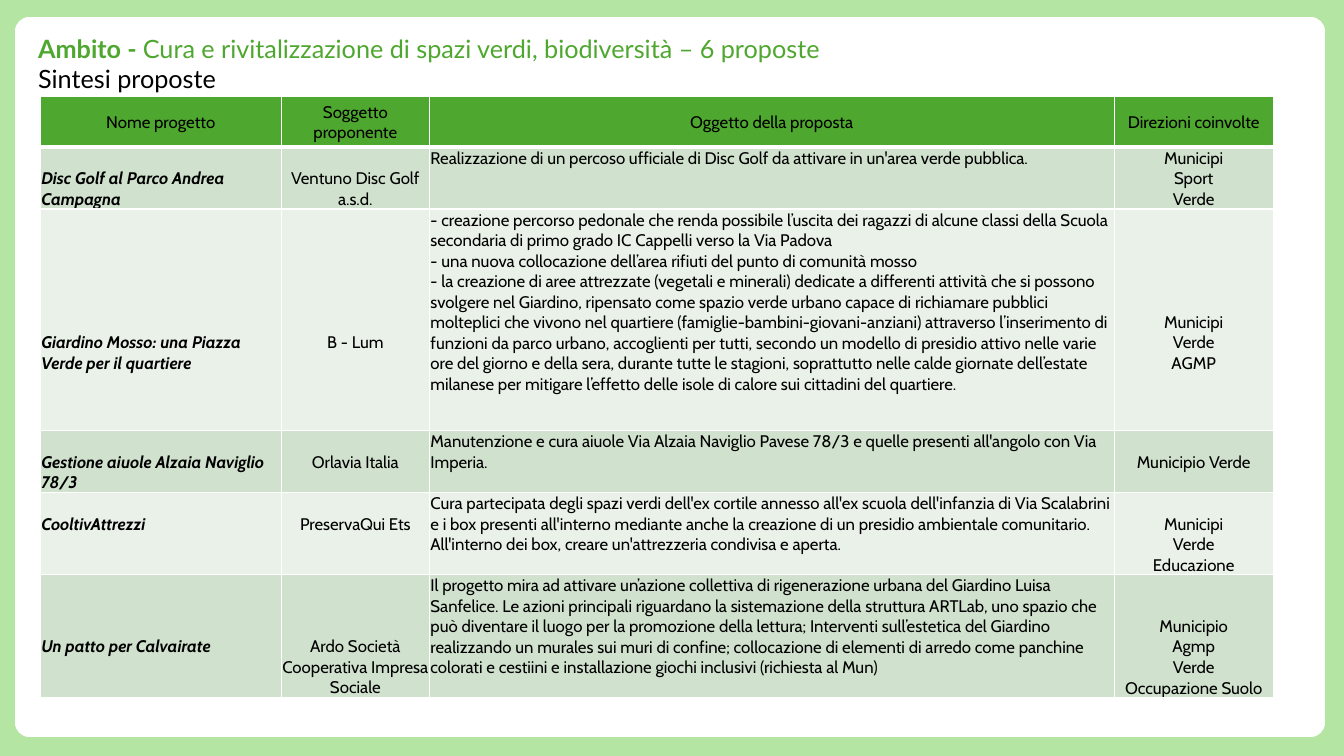
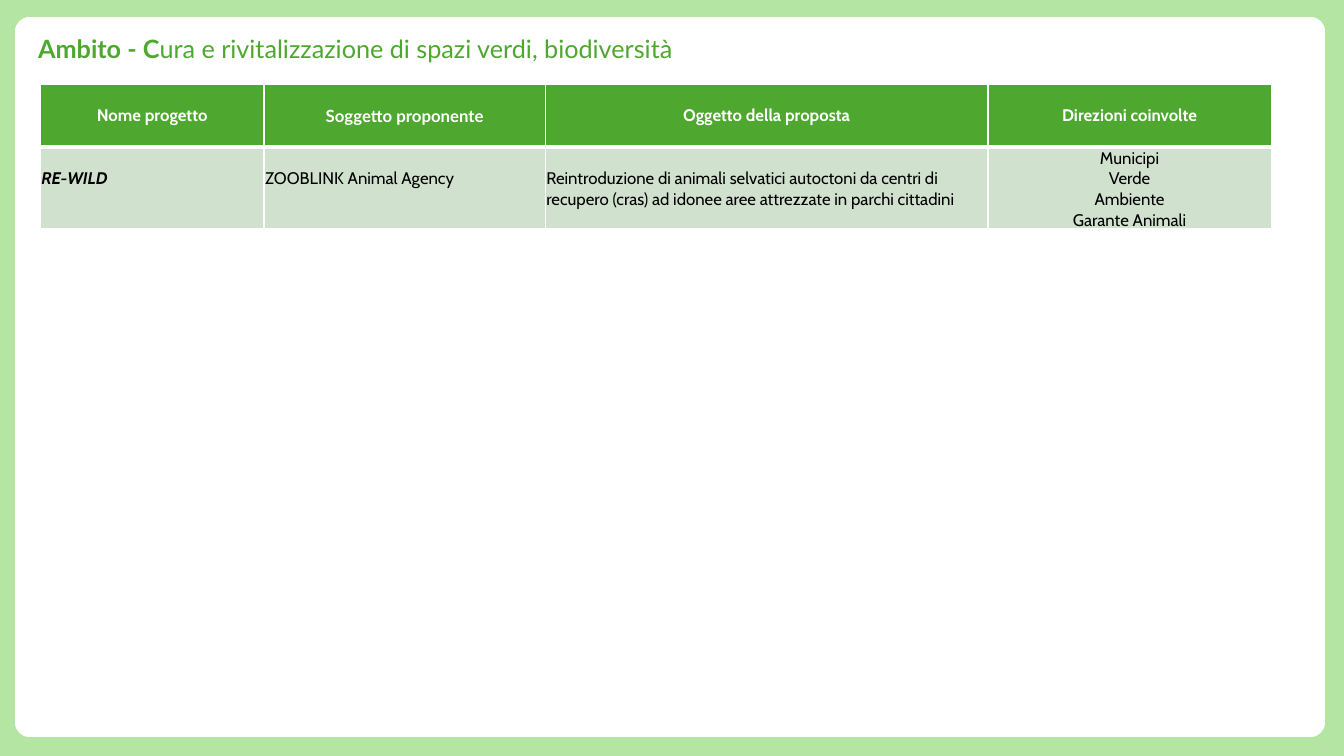
"""Builds two slides of citizen proposals for green spaces, each a title over a table."""
import pptx
import pptx.dml.color
import pptx.enum.shapes
import pptx.enum.text
import pptx.oxml
import pptx.oxml.ns
import pptx.util

RGBColor = pptx.dml.color.RGBColor
Pt = pptx.util.Pt
ALIGN = pptx.enum.text.PP_ALIGN
ANCHOR = pptx.enum.text.MSO_ANCHOR

WIDTH, HEIGHT = pptx.util.Inches(13.33), pptx.util.Inches(7.5)
FRAME_GREEN = RGBColor(0xB4, 0xE5, 0xA2)
GREEN = RGBColor(0x4E, 0xA7, 0x2E)
BANDS = (RGBColor(0xD0, 0xE1, 0xCD), RGBColor(0xE9, 0xF1, 0xE8))
WHITE = RGBColor(0xFF, 0xFF, 0xFF)
BLACK = RGBColor(0, 0, 0)
TITLE_FONT, TABLE_FONT = "Lato", "Cabin"
LINE_HEIGHT = Pt(14.6)
CELL_INSET = Pt(0.7)
TABLE_LEFT = 3
HEADINGS = ("Nome progetto", "Soggetto proponente", "Oggetto della proposta", "Direzioni coinvolte")

GARDEN_AIMS = (
    "- creazione percorso pedonale che renda possibile l’uscita dei ragazzi di alcune classi "
    "della Scuola secondaria di primo grado IC Cappelli verso la Via Padova",
    "- una nuova collocazione dell’area rifiuti del punto di comunità mosso",
    "- la creazione di aree attrezzate (vegetali e minerali) dedicate a differenti attività che "
    "si possono svolgere nel Giardino, ripensato come spazio verde urbano capace di richiamare "
    "pubblici molteplici che vivono nel quartiere (famiglie-bambini-giovani-anziani) attraverso "
    "l’inserimento di funzioni da parco urbano, accoglienti per tutti, secondo un modello di "
    "presidio attivo nelle varie ore del giorno e della sera, durante tutte le stagioni, "
    "soprattutto nelle calde giornate dell’estate milanese per mitigare l’effetto delle isole "
    "di calore sui cittadini del quartiere.",
)
PROPOSALS = [
    (("Disc Golf al Parco Andrea Campagna",
      "Ventuno Disc Golf a.s.d.",
      "Realizzazione di un percoso ufficiale di Disc Golf da attivare in un'area verde pubblica.",
      "Municipi\nSport\nVerde"), (1, 1, 0, 0)),
    (("Giardino Mosso: una Piazza Verde per il quartiere",
      "B - Lum",
      "\n".join(GARDEN_AIMS),
      "Municipi\nVerde\nAGMP"), (6, 6, 0, 5)),
    (("Gestione aiuole Alzaia Naviglio 78/3",
      "Orlavia Italia",
      "Manutenzione e cura aiuole Via Alzaia Naviglio Pavese 78/3 e quelle presenti all'angolo "
      "con Via Imperia.",
      "Municipio Verde"), (1, 1, 0, 1)),
    (("CooltivAttrezzi",
      "PreservaQui Ets",
      "Cura partecipata degli spazi verdi dell'ex cortile annesso all'ex scuola dell'infanzia di "
      "Via Scalabrini e i box presenti all'interno mediante anche la creazione di un presidio "
      "ambientale comunitario. All'interno dei box, creare un'attrezzeria condivisa e aperta.",
      "Municipi\nVerde\nEducazione"), (1, 1, 0, 1)),
    (("Un patto per Calvairate",
      "Ardo Società Cooperativa Impresa Sociale",
      "Il progetto mira ad attivare un’azione collettiva di rigenerazione urbana del Giardino "
      "Luisa Sanfelice. Le azioni principali riguardano la sistemazione della struttura ARTLab, "
      "uno spazio che può diventare il luogo per la promozione della lettura; Interventi "
      "sull’estetica del Giardino realizzando un murales sui muri di confine; collocazione di "
      "elementi di arredo come panchine colorati e cestiini e installazione giochi inclusivi "
      "(richiesta al Mun)",
      "Municipio\nAgmp\nVerde\nOccupazione Suolo"), (3, 3, 0, 2)),
]
REWILDING = [
    (("RE-WILD",
      "ZOOBLINK Animal Agency",
      "Reintroduzione di animali selvatici autoctoni da centri di recupero (cras) ad idonee aree "
      "attrezzate in parchi cittadini",
      "Municipi\nVerde\nAmbiente\nGarante Animali"), (1, 1, 1, 0)),
]


def across(percent):
    return round(WIDTH * percent / 100)


def down(percent):
    return round(HEIGHT * percent / 100)


def write(paragraph, text, *, size=12, face=TABLE_FONT, color=BLACK, bold=False, italic=False,
          align=ALIGN.LEFT):
    paragraph.alignment = align
    run = paragraph.add_run()
    run.text = text
    font = run.font
    font.size, font.name, font.bold, font.italic = Pt(size), face, bold, italic
    font.color.rgb = color


def add_rectangle(slide, left, top, width, height, fill):
    rectangle = slide.shapes.add_shape(pptx.enum.shapes.MSO_SHAPE.RECTANGLE, across(left),
                                       down(top), across(width), down(height))
    rectangle.shadow.inherit = False
    rectangle.fill.solid()
    rectangle.fill.fore_color.rgb = fill
    rectangle.line.fill.background()
    return rectangle


def add_framed_slide(deck):
    slide = deck.slides.add_slide(deck.slide_layouts[6])
    add_rectangle(slide, 0, 0, 100, 100, FRAME_GREEN)
    panel = add_rectangle(slide, 2.18, 4.13, 95.35, 91.47, WHITE)
    panel.line.color.rgb = WHITE
    panel.line.width = Pt(20)
    outline = panel.line._get_or_add_ln()
    outline.append(pptx.oxml.parse_xml(f"<a:round {pptx.oxml.ns.nsdecls('a')}/>"))
    return slide


def add_title(slide, lead, rest, height, subtitle=None):
    box = slide.shapes.add_textbox(across(2.1), down(3.73), across(97.9), down(height))
    frame = box.text_frame
    frame.word_wrap = True
    write(frame.paragraphs[0], lead, size=18, face=TITLE_FONT, color=GREEN, bold=True)
    write(frame.paragraphs[0], rest, size=18, face=TITLE_FONT, color=GREEN)
    if subtitle:
        write(frame.add_paragraph(), subtitle, size=18, face=TITLE_FONT)


def set_borders(cell, top=1, bottom=1):
    sides = (("L", 1), ("R", 1), ("T", top), ("B", bottom))
    for place, (side, points) in enumerate(sides):
        border = pptx.oxml.parse_xml(
            f'<a:ln{side} {pptx.oxml.ns.nsdecls("a")} w="{int(Pt(points))}">'
            f'<a:solidFill><a:srgbClr val="{WHITE}"/></a:solidFill></a:ln{side}>')
        cell._tc.get_or_add_tcPr().insert(place, border)


def fill_cell(cell, text, fill, **text_format):
    cell.fill.solid()
    cell.fill.fore_color.rgb = fill
    frame = cell.text_frame
    for number, line in enumerate(text.split("\n")):
        paragraph = frame.add_paragraph() if number else frame.paragraphs[0]
        write(paragraph, line, **text_format)


def add_proposals(slide, proposals, top, columns, rows, alignments, heading_formats):
    grid = slide.shapes.add_table(len(rows), len(columns), across(TABLE_LEFT), down(top),
                                  across(sum(columns)), down(sum(rows))).table
    grid.first_row = grid.horz_banding = False
    for column, share in zip(grid.columns, columns):
        column.width = across(share)
    for row, share in zip(grid.rows, rows):
        row.height = down(share)

    for column, (heading, heading_format) in enumerate(zip(HEADINGS, heading_formats)):
        cell = grid.cell(0, column)
        fill_cell(cell, heading, GREEN, align=ALIGN.CENTER, **heading_format)
        cell.vertical_anchor = ANCHOR.MIDDLE
        set_borders(cell, bottom=3)

    for row, (texts, lines_down) in enumerate(proposals, start=1):
        for column, (text, drop) in enumerate(zip(texts, lines_down)):
            cell = grid.cell(row, column)
            is_name = column == 0
            fill_cell(cell, text, BANDS[(row - 1) % 2], bold=is_name, italic=is_name,
                      align=alignments[column])
            cell.margin_left = cell.margin_right = CELL_INSET
            cell.margin_top = CELL_INSET + drop * LINE_HEIGHT
            cell.margin_bottom = 0
            set_borders(cell, top=3 if row == 1 else 1)


def main():
    deck = pptx.Presentation()
    deck.slide_width, deck.slide_height = WIDTH, HEIGHT

    summary = add_framed_slide(deck)
    add_title(summary, "Ambito - ",
              "Cura e rivitalizzazione di spazi verdi, biodiversità – 6 proposte",
              13.47, subtitle="Sintesi proposte")
    add_proposals(summary, PROPOSALS, 12.8, (17.93, 11.03, 50.94, 11.85),
                  (6.4, 8.13, 29.33, 8.13, 10.67, 16),
                  (ALIGN.LEFT, ALIGN.CENTER, ALIGN.LEFT, ALIGN.CENTER), [{}] * 4)

    rewilding = add_framed_slide(deck)
    add_title(rewilding, "Ambito - C", "ura e rivitalizzazione di spazi verdi, biodiversità", 9.47)
    heading_faces = (TABLE_FONT, TITLE_FONT, TABLE_FONT, TABLE_FONT)
    add_proposals(rewilding, REWILDING, 11.2, (16.65, 20.93, 32.93, 21.08), (8.27, 10.8),
                  (ALIGN.LEFT, ALIGN.LEFT, ALIGN.LEFT, ALIGN.CENTER),
                  [{"face": face, "color": WHITE, "bold": True} for face in heading_faces])

    deck.save("out.pptx")


if __name__ == "__main__":
    main()
